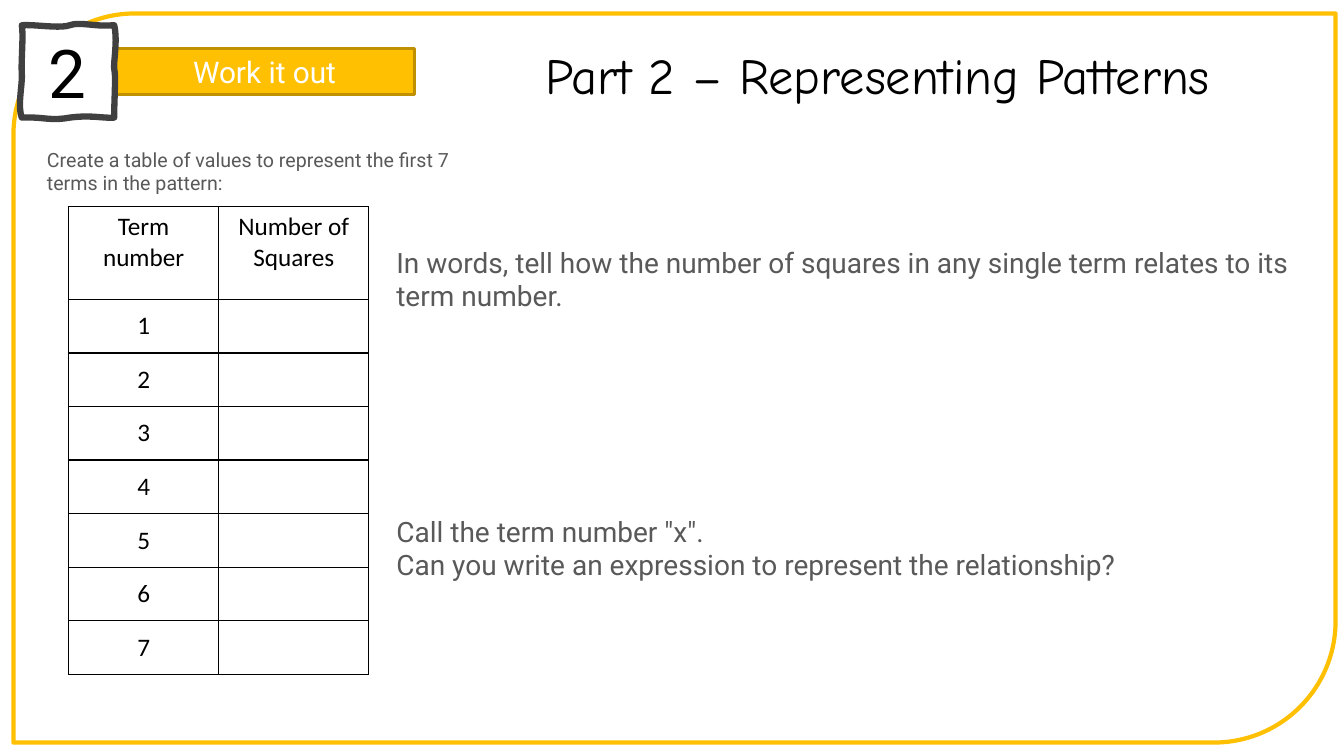
from lxml.etree import SubElement
from pptx import Presentation
from pptx.dml.color import RGBColor as Color
from pptx.enum.shapes import MSO_SHAPE as Shape
from pptx.enum.text import MSO_ANCHOR as Anchor, MSO_AUTO_SIZE as Fit, PP_ALIGN as Align
from pptx.oxml.ns import qn
from pptx.util import Inches, Pt

INK = {"gold": "FFC001", "rim": "BF9000", "dark": "404040",
       "grey": "595959", "black": "000000", "white": "FFFFFF"}
COLS, ROWS = 160, 90
EDGE = [
    ((0, 0), (0.15, -0.01), (0.41, 0.04), (0.52, 0)),
    ((0.52, 0), (0.64, -0.04), (0.78, 0.02), (1, 0)),
    ((1, 0), (1.04, 0.16), (0.99, 0.41), (1, 0.47)),
    ((1, 0.47), (1.02, 0.57), (1, 0.77), (1, 1)),
    ((1, 1), (0.89, 1.01), (0.75, 0.97), (0.52, 1)),
    ((0.52, 1), (0.3, 1.04), (0.25, 0.99), (0, 1)),
    ((0, 1), (-0.05, 0.87), (0.01, 0.63), (0, 0.52)),
    ((0, 0.52), (-0.01, 0.41), (0.02, 0.11), (0, 0)),
]


def curve(ends, steps=10):
    for step in range(1, steps + 1):
        t = step / steps
        parts = ((1 - t) ** 3, 3 * t * (1 - t) ** 2, 3 * t * t * (1 - t), t ** 3)
        yield tuple(sum(w * p[axis] for w, p in zip(parts, ends)) for axis in (0, 1))


class Page:
    def __init__(self, deck):
        self.wide, self.high = deck.slide_width, deck.slide_height
        self.slide = deck.slides.add_slide(deck.slide_layouts[5])
        self.shapes = self.slide.shapes

    def x(self, cols):
        return round(self.wide * cols / COLS)

    def y(self, rows):
        return round(self.high * rows / ROWS)

    def box(self, left, top, width, height):
        return self.x(left), self.y(top), self.x(width), self.y(height)

    def letter(self, frame, lines, size, ink, font="Roboto",
               align=Align.LEFT, anchor=Anchor.TOP, gaps=()):
        frame.word_wrap = True
        frame.vertical_anchor = anchor
        frame.text = "\n".join(lines)
        for para in frame.paragraphs:
            para.alignment = align
            para.font.size, para.font.name = Pt(size), font
            para.font.color.rgb = Color.from_string(INK[ink])
        for index, gap in gaps:
            frame.paragraphs[index].space_before = Pt(gap)

    def paint(self, shape, fill, line, width):
        shape.shadow.inherit = False
        if fill:
            shape.fill.solid()
            shape.fill.fore_color.rgb = Color.from_string(INK[fill])
        else:
            shape.fill.background()
        shape.line.color.rgb = Color.from_string(INK[line])
        shape.line.width = Pt(width)
        return shape

    def shape(self, kind, place, fill, line, width):
        item = self.shapes.add_shape(kind, *self.box(*place))
        return self.paint(item, fill, line, width)

    def label(self, place, text):
        item = self.shape(Shape.RECTANGLE, place, "gold", "rim", 2.25)
        self.letter(item.text_frame, [text], 21.3, "white",
                    align=Align.CENTER, anchor=Anchor.MIDDLE)

    def badge(self, left, top, side, text):
        dots = [(self.x(left + side * a), self.y(top + side * b))
                for ends in EDGE for a, b in curve(ends)]
        pen = self.shapes.build_freeform(*dots[-1])
        pen.add_line_segments(dots, close=True)
        item = self.paint(pen.convert_to_shape(), "white", "dark", 4.5)
        self.letter(item.text_frame, [text], 48, "black",
                    align=Align.CENTER, anchor=Anchor.MIDDLE)

    def title(self, place, text):
        item = self.shapes.title
        item.left, item.top, item.width, item.height = self.box(*place)
        item.text_frame.auto_size = Fit.NONE
        self.letter(item.text_frame, [text], 36, "black", "Comic Neue",
                    Align.CENTER, Anchor.MIDDLE)

    def text(self, place, lines, size, gaps=()):
        item = self.shapes.add_textbox(*self.box(*place))
        self.letter(item.text_frame, lines, size, "grey", gaps=gaps)

    def border(self, cell):
        props = cell._tc.get_or_add_tcPr()
        for side in ("a:lnL", "a:lnR", "a:lnT", "a:lnB"):
            line = SubElement(props, qn(side), w=str(Pt(1)))
            fill = SubElement(line, qn("a:solidFill"))
            SubElement(fill, qn("a:srgbClr"), val=INK["black"])

    def table(self, left, top, width, head, row, data):
        place = self.box(left, top, width * len(data[0]), head + row * (len(data) - 1))
        grid = self.shapes.add_table(len(data), len(data[0]), *place).table
        grid.first_row = grid.horz_banding = False
        for col in grid.columns:
            col.width = self.x(width)
        for r, cells in enumerate(data):
            grid.rows[r].height = self.y(row if r else head)
            for c, text in enumerate(cells):
                cell = grid.cell(r, c)
                self.border(cell)
                cell.fill.background()
                self.letter(cell.text_frame, [text], 18, "black", "Calibri", Align.CENTER)
                cell.vertical_anchor = Anchor.MIDDLE if r else Anchor.TOP


def main():
    deck = Presentation()
    deck.slide_width, deck.slide_height = Inches(13.33), Inches(7.5)
    page = Page(deck)
    page.shape(Shape.ROUND_2_DIAG_RECTANGLE, (1.6, 1.6, 157.4, 86.8), None, "gold", 3)
    page.label((13.6, 5.8, 35.8, 5.5), "Work it out")
    page.badge(2.6, 3, 11, "2")
    page.text((46, 28.6, 112.9, 41.6), [
        "In words, tell how the number of squares in any single term relates to its term number.",
        'Call the term number "x".',
        "Can you write an expression to represent the relationship?",
    ], 20, gaps=[(1, 144)])
    page.table(8.16, 24.6, 17.88, 11.04, 6.38,
               [("Term number", "Number of Squares")] + [(str(n), "") for n in range(1, 8)])
    page.text((4.4, 17, 50.5, 6.8),
              ["Create a table of values to represent the first 7 terms in the pattern:"], 14)
    page.title((51.7, 4.6, 105.6, 8.5), "Part 2 – Representing Patterns")
    deck.save("out.pptx")


if __name__ == "__main__":
    main()
